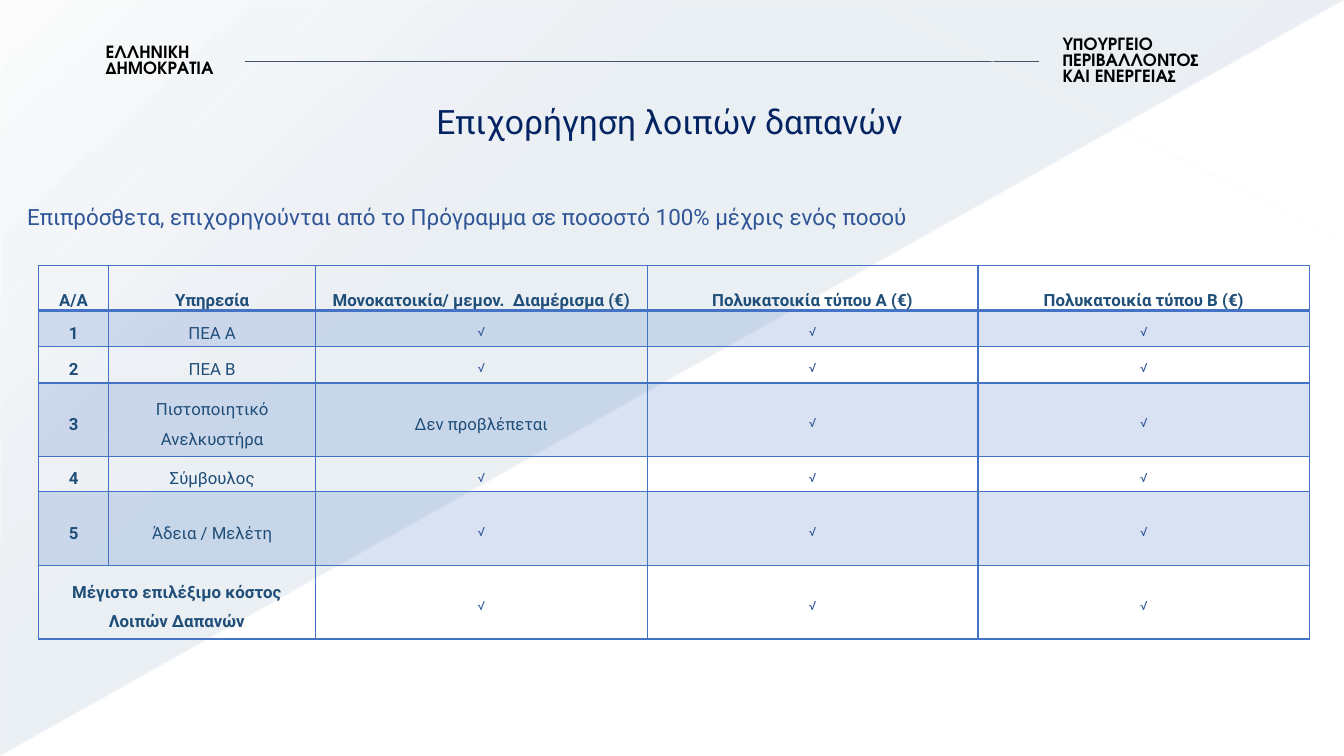
import pptx
import pptx.dml.color
import pptx.enum.shapes
import pptx.enum.text
import pptx.oxml
import pptx.oxml.ns
import pptx.util
from pptx.util import Inches

RGBColor = pptx.dml.color.RGBColor
ALIGN = pptx.enum.text.PP_ALIGN
ANCHOR = pptx.enum.text.MSO_ANCHOR

WHITE = RGBColor(0xFF, 0xFF, 0xFF)
BLACK = RGBColor(0x00, 0x00, 0x00)
NAVY = RGBColor(0x00, 0x20, 0x60)
BLUE = RGBColor(0x2F, 0x55, 0x97)
DARK_BLUE = RGBColor(0x1F, 0x4E, 0x79)
TABLE_BLUE = RGBColor(0x44, 0x72, 0xC4)
VEIL_BLUE = RGBColor(0x1F, 0x49, 0x7D)
SLATE = RGBColor(0x44, 0x54, 0x6A)
CREAM = RGBColor(0xFA, 0xF8, 0xEE)

BODY_FONT = "Roboto"
HEADER_FONT = "TeX Gyre Adventor"
CHECK = "√"

COLUMN_WIDTHS = [0.7, 2.05, 3.29, 3.28, 3.29]
ROW_HEIGHTS = [0.45, 0.36, 0.36, 0.73, 0.35, 0.73, 0.73]
ROWS = [
    ["Α/Α", "Υπηρεσία", "Μονοκατοικία/ μεμον.  Διαμέρισμα (€)",
     "Πολυκατοικία τύπου Α (€)", "Πολυκατοικία τύπου Β (€)"],
    ["1", "ΠΕΑ Α", CHECK, CHECK, CHECK],
    ["2", "ΠΕΑ Β", CHECK, CHECK, CHECK],
    ["3", "Πιστοποιητικό Ανελκυστήρα", "Δεν προβλέπεται", CHECK, CHECK],
    ["4", "Σύμβουλος", CHECK, CHECK, CHECK],
    ["5", "Άδεια / Μελέτη", CHECK, CHECK, CHECK],
    ["Μέγιστο επιλέξιμο κόστος Λοιπών Δαπανών", "", CHECK, CHECK, CHECK],
]


def add_child(parent, tag, **attributes):
    child = parent.makeelement(pptx.oxml.ns.qn(tag), attributes)
    parent.append(child)
    return child


def add_solid_color(parent, color, opacity=100):
    color_element = add_child(parent, "a:srgbClr", val=str(color))
    if opacity < 100:
        add_child(color_element, "a:alpha", val=str(opacity * 1000))


def set_opacity(properties, opacity):
    for color_element in properties.findall(
            pptx.oxml.ns.qn("a:solidFill") + "/" + pptx.oxml.ns.qn("a:srgbClr")):
        add_child(color_element, "a:alpha", val=str(opacity * 1000))


def format_paragraph(paragraph, size, color, font=BODY_FONT, bold=False,
                     align=ALIGN.LEFT, spacing=0.9):
    paragraph.alignment = align
    paragraph.line_spacing = spacing
    for run in paragraph.runs:
        run.font.name = font
        run.font.size = pptx.util.Pt(size)
        run.font.bold = bold
        run.font.color.rgb = color


def add_veil(slide):
    veil = slide.shapes.add_shape(
        pptx.enum.shapes.MSO_SHAPE.RIGHT_TRIANGLE,
        Inches(0.01), Inches(0.01), Inches(13.31), Inches(7.48))
    veil.shadow.inherit = False
    veil.line.fill.background()
    veil.rotation = 180
    properties = veil.element.spPr
    properties.xfrm.set("flipH", "1")
    veil.fill.background()
    empty_fill = properties.find(pptx.oxml.ns.qn("a:noFill"))
    gradient = properties.makeelement(pptx.oxml.ns.qn("a:gradFill"), {"rotWithShape": "1"})
    stops = add_child(gradient, "a:gsLst")
    for position, opacity in [(0, 10), (70, 8), (100, 1)]:
        stop = add_child(stops, "a:gs", pos=str(position * 1000))
        add_solid_color(stop, VEIL_BLUE, opacity)
    add_child(gradient, "a:lin", ang=str(133 * 60000), scaled="0")
    properties.replace(empty_fill, gradient)


def add_line(slide, start, end, color, width, opacity=100):
    line = slide.shapes.add_connector(
        pptx.enum.shapes.MSO_CONNECTOR.STRAIGHT,
        Inches(start[0]), Inches(start[1]), Inches(end[0]), Inches(end[1]))
    line.line.color.rgb = color
    line.line.width = pptx.util.Pt(width)
    if opacity < 100:
        set_opacity(line.line._get_or_add_ln(), opacity)
    add_child(line.element.spPr, "a:effectLst")


def add_text(slide, position, text, size, color, **formatting):
    box = slide.shapes.add_textbox(*[Inches(length) for length in position])
    box.text_frame.word_wrap = True
    box.text_frame.text = text
    format_paragraph(box.text_frame.paragraphs[0], size, color, **formatting)


def set_title(slide, text):
    title = slide.shapes.title
    title.left, title.top = Inches(0.89), Inches(0.94)
    title.width, title.height = Inches(11.5), Inches(0.58)
    title.text_frame.text = text
    title.text_frame.vertical_anchor = ANCHOR.MIDDLE
    format_paragraph(title.text_frame.paragraphs[0], 24, NAVY, align=ALIGN.CENTER)


def set_borders(cell, bottom_width, top_width):
    properties = cell._tc.get_or_add_tcPr()
    widths = {"a:lnL": 1, "a:lnR": 1, "a:lnT": top_width, "a:lnB": bottom_width}
    for tag, width in widths.items():
        border = add_child(properties, tag, w=str(pptx.util.Pt(width)))
        add_solid_color(add_child(border, "a:solidFill"), TABLE_BLUE)


def format_cell(cell, text, row, column):
    set_borders(cell, 2 if row == 0 else 1, 2 if row == 1 else 1)
    if row % 2:
        cell.fill.solid()
        cell.fill.fore_color.rgb = TABLE_BLUE
        set_opacity(cell._tc.tcPr, 20)
    else:
        cell.fill.background()
    cell.margin_left = cell.margin_right = Inches(0.07)
    cell.margin_top = cell.margin_bottom = 0
    cell.vertical_anchor = ANCHOR.BOTTOM if row == 0 else ANCHOR.MIDDLE
    cell.text_frame.text = text
    paragraph = cell.text_frame.paragraphs[0]
    is_check = text == CHECK
    format_paragraph(paragraph, 9 if is_check else 12, BLUE if is_check else DARK_BLUE,
                     bold=row == 0 or column == 0, align=ALIGN.CENTER, spacing=1.5)
    if not is_check:
        paragraph.space_after = pptx.util.Pt(4)


def add_cost_table(slide):
    frame = slide.shapes.add_table(
        len(ROWS), len(COLUMN_WIDTHS), Inches(0.38), Inches(2.63),
        Inches(sum(COLUMN_WIDTHS)), Inches(sum(ROW_HEIGHTS)))
    table = frame.table
    table.first_row = False
    table.horz_banding = False
    for column, width in zip(table.columns, COLUMN_WIDTHS):
        column.width = Inches(width)
    for row, height in zip(table.rows, ROW_HEIGHTS):
        row.height = Inches(height)
    last_row = len(ROWS) - 1
    table.cell(last_row, 0).merge(table.cell(last_row, 1))
    for row, texts in enumerate(ROWS):
        for column, text in enumerate(texts):
            format_cell(table.cell(row, column), text, row, column)


def main():
    presentation = pptx.Presentation()
    presentation.slide_width = Inches(13.33)
    presentation.slide_height = Inches(7.5)
    slide = presentation.slides.add_slide(presentation.slide_layouts[5])
    slide.background.fill.solid()
    slide.background.fill.fore_color.rgb = WHITE

    add_veil(slide)
    add_line(slide, (2.43, 0.61), (10.31, 0.61), SLATE, 1)
    add_line(slide, (13.32, 2.4), (8.68, 0.01), CREAM, 0.75, opacity=45)
    headings = [
        ((10.44, 0.32, 1.85, 0.59), "ΥΠΟΥΡΓΕΙΟ ΠΕΡΙΒΑΛΛΟΝΤΟΣ ΚΑΙ ΕΝΕΡΓΕΙΑΣ"),
        ((0.95, 0.4, 1.85, 0.42), "ΕΛΛΗΝΙΚΗ ΔΗΜΟΚΡΑΤΙΑ"),
    ]
    for position, text in headings:
        add_text(slide, position, text, 12, BLACK, font=HEADER_FONT, bold=True, spacing=0.8)
    set_title(slide, "Επιχορήγηση λοιπών δαπανών")
    add_text(slide, (0.17, 2, 12.78, 0.73),
             "Επιπρόσθετα, επιχορηγούνται από το Πρόγραμμα σε ποσοστό 100% μέχρις ενός ποσού",
             16, BLUE)
    add_cost_table(slide)
    presentation.save("out.pptx")


if __name__ == "__main__":
    main()
